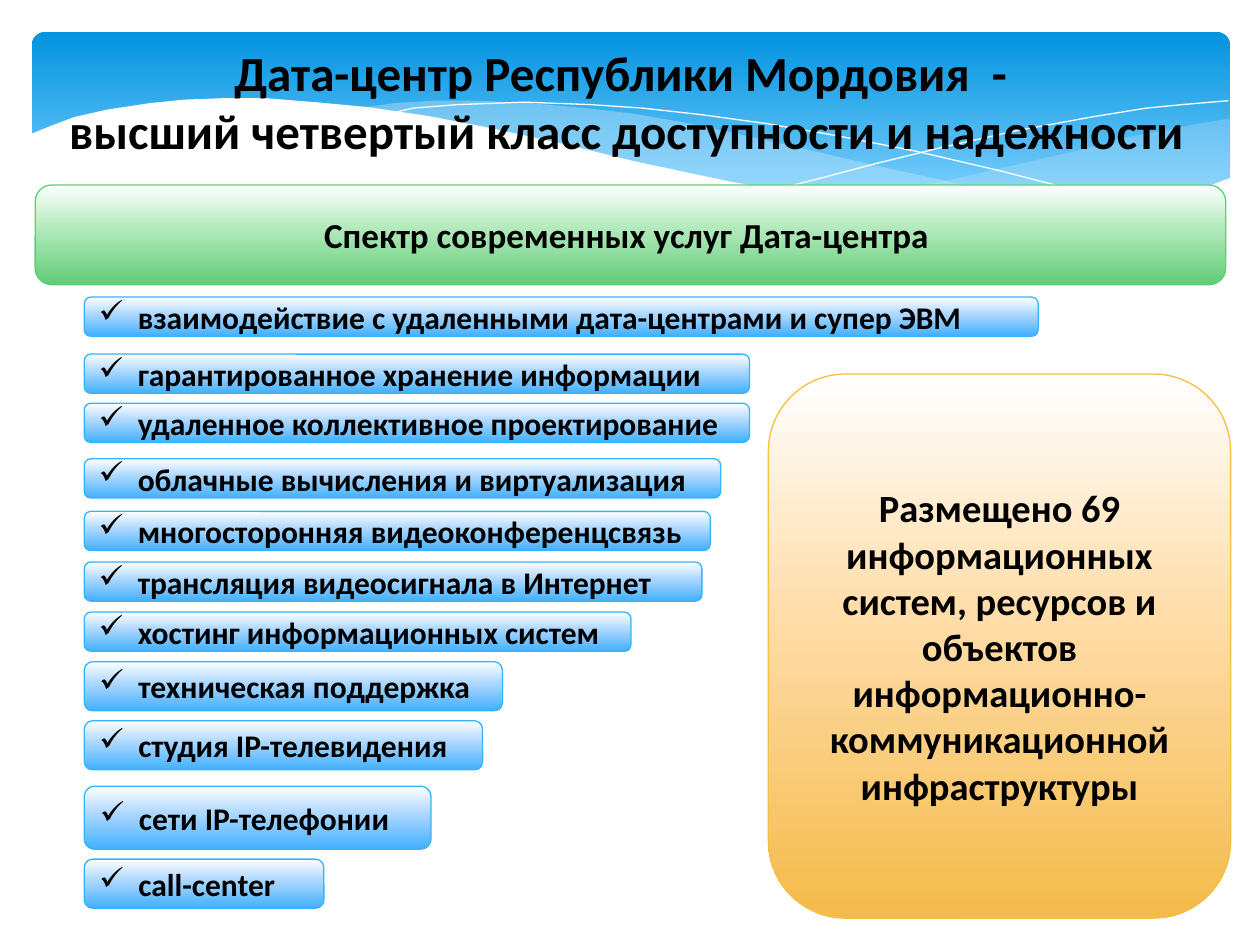
from copy import deepcopy
from dataclasses import dataclass

from lxml.etree import SubElement
from pptx import Presentation
from pptx.dml.color import RGBColor
from pptx.enum.shapes import MSO_SHAPE
from pptx.enum.text import MSO_ANCHOR, PP_ALIGN
from pptx.oxml.ns import qn
from pptx.util import Cm, Pt


@dataclass(frozen=True)
class Theme:
    font: str = "Calibri"
    ink: str = "000000"
    white: str = "FFFFFF"
    wave: str = "C6E7FC"
    header: tuple = ((0, "0293E0"), (0.9, "83D3FE"))
    green: tuple = ((0, "FFFFFF"), (0.44, "B1E9BB"), (1, "61CD78"))
    green_edge: str = "5BD078"
    blue: tuple = ((0, "FFFFFF"), (0.44, "ACD7FF"), (1, "42B0FD"))
    blue_edge: str = "31B6FD"
    orange: tuple = ((0, "FFFFFF"), (0.44, "FFDDAA"), (1, "F4BB4A"))
    orange_edge: str = "F5C040"
    title_size: int = 28
    summary_size: int = 22
    heading_size: int = 20
    service_size: int = 18


theme = Theme()
deck = Presentation()
deck.slide_width, deck.slide_height = Cm(25.4), Cm(19.05)
slide = deck.slides.add_slide(deck.slide_layouts[6])
shapes = slide.shapes


def write(holder, text, size, align=PP_ALIGN.CENTER, bullet=None):
    """Fill a shape with bold text, one paragraph per line."""
    frame = holder.text_frame
    frame.word_wrap = True
    frame.vertical_anchor = MSO_ANCHOR.MIDDLE
    frame.text = text
    for paragraph in frame.paragraphs:
        paragraph.alignment = align
        font = paragraph.font
        font.name, font.size, font.bold = theme.font, Pt(size), True
        font.color.rgb = RGBColor.from_string(theme.ink)
        if bullet:
            properties = paragraph.runs[0].font
            properties.name = theme.font
            layout = paragraph._p.get_or_add_pPr()
            layout.set("marL", str(Cm(0.79)))
            layout.set("indent", str(-Cm(0.79)))
            mark = SubElement(layout, qn("a:buChar"), char=bullet)
            layout.find(qn("a:defRPr")).addprevious(mark)


def add_panel(left, top, width, height, stops, edge=None, corner=0.167):
    """Add a rounded rectangle with a gradient running from top to bottom."""
    panel = shapes.add_shape(MSO_SHAPE.ROUNDED_RECTANGLE,
                             Cm(left), Cm(top), Cm(width), Cm(height))
    panel.adjustments[0] = corner
    panel.shadow.inherit = False
    panel.fill.gradient()
    panel.fill.gradient_angle = 270
    stop_list = panel.element.spPr.find(".//" + qn("a:gsLst"))
    for _ in stops[2:]:
        stop_list.append(deepcopy(stop_list[0]))
    for stop, (position, color) in zip(panel.fill.gradient_stops, stops):
        stop.position = position
        stop.color.rgb = RGBColor.from_string(color)
    if edge:
        panel.line.color.rgb = RGBColor.from_string(edge)
        panel.line.width = Pt(0.75)
    else:
        panel.line.fill.background()
    return panel


# Header band with waves: points in cm, fill opacity in percent (None = line)
add_panel(0.64, 0.64, 24.16, 3.96, theme.header, corner=0.071)

right_wave = [
    (24.79, 2.39), (24.08, 2.51), (23.39, 2.64), (22.63, 2.79), (21.87, 3),
    (20.45, 3.33), (19.13, 3.63), (17.93, 3.86), (16.79, 4.06), (17.55, 4.17),
    (18.26, 4.24), (18.92, 4.29), (19.53, 4.34), (20.4, 4.37), (21.21, 4.37),
    (21.92, 4.32), (22.58, 4.22), (23.19, 4.11), (23.75, 3.96), (24.46, 3.73),
    (24.79, 3.58)]
middle_wave = [
    (22.68, 4.24), (21.26, 4.04), (19.69, 3.78), (17.93, 3.4), (15.98, 2.95),
    (14.83, 2.69), (13.74, 2.46), (12.75, 2.29), (11.81, 2.18), (10.67, 2.08),
    (9.65, 2.03), (8.74, 2.03), (7.95, 2.08), (7.26, 2.18), (8.2, 2.29),
    (9.19, 2.46), (10.26, 2.69), (11.4, 2.95), (13.46, 3.43), (15.27, 3.81),
    (16.51, 4.01), (17.65, 4.19), (18.69, 4.29), (19.94, 4.37), (21.03, 4.39),
    (21.77, 4.34)]
falling_line = [
    (7.85, 2.29), (8.33, 2.18), (9.22, 2.11), (10.57, 2.06), (11.91, 2.11),
    (12.95, 2.18), (14.12, 2.31), (15.44, 2.49), (16.89, 2.74), (18.47, 3.05),
    (20.19, 3.45), (22.07, 3.94), (23.04, 4.22)]
rising_line = [
    (15.57, 3.84), (16.59, 3.58), (17.65, 3.3), (19, 2.97), (20.47, 2.64),
    (22, 2.36), (23.11, 2.18), (23.83, 2.11), (24.77, 2.03)]
white_wave = [
    (24.82, 3.58), (24.13, 3.84), (23.37, 4.04), (22.53, 4.22), (21.59, 4.32),
    (20.55, 4.34), (19.33, 4.32), (17.98, 4.19), (16.46, 3.96), (14.71, 3.66),
    (12.78, 3.25), (11.35, 2.9), (9.93, 2.59), (8.64, 2.34), (7.42, 2.16),
    (6.35, 2.06), (5.36, 1.98), (4.5, 1.98), (3.71, 2.01), (3.02, 2.08),
    (2.16, 2.21), (1.5, 2.36), (1.02, 2.54), (0.58, 2.72), (0.58, 5.69),
    (24.82, 5.69)]

for points, color, opacity in [
    (right_wave, theme.wave, 29),
    (middle_wave, theme.wave, 40),
    (falling_line, theme.white, None),
    (rising_line, theme.white, None),
    (white_wave, theme.white, 100),
]:
    start, *rest = [(Cm(x), Cm(y)) for x, y in points]
    outline = shapes.build_freeform(*start)
    outline.add_line_segments(rest, close=opacity is not None)
    wave = outline.convert_to_shape()
    wave.shadow.inherit = False
    if opacity is None:
        wave.fill.background()
        wave.line.color.rgb = RGBColor.from_string(color)
        wave.line.width = Pt(0)
    else:
        wave.line.fill.background()
        wave.fill.solid()
        wave.fill.fore_color.rgb = RGBColor.from_string(color)
        tint = wave.element.spPr.find(qn("a:solidFill"))[0]
        SubElement(tint, qn("a:alpha"), val=str(opacity * 1000))

title = shapes.add_textbox(Cm(0.71), Cm(0.74), Cm(23.6), Cm(2.59))
write(title, "Дата-центр Республики Мордовия  -\n"
             " высший четвертый класс доступности и надежности",
      size=theme.title_size)

heading = add_panel(0.71, 3.73, 24, 2.01, theme.green, theme.green_edge)
write(heading, "Спектр современных услуг Дата-центра ", size=theme.heading_size)

# Services: top, width, height in cm
for top, width, height, service in [
    (5.99, 19.23, 0.79, "взаимодействие с удаленными дата-центрами и супер ЭВМ"),
    (7.14, 13.41, 0.79, "гарантированное хранение информации"),
    (8.13, 13.41, 0.79, "удаленное коллективное проектирование"),
    (9.25, 12.83, 0.79, "облачные вычисления и виртуализация"),
    (10.31, 12.62, 0.79, "многосторонняя видеоконференцсвязь"),
    (11.33, 12.45, 0.79, "трансляция видеосигнала в Интернет"),
    (12.34, 11.02, 0.79, "хостинг информационных систем"),
    (13.34, 8.43, 0.99, "техническая поддержка"),
    (14.53, 8.03, 0.99, "студия IP-телевидения"),
    (15.85, 6.99, 1.27, "сети IP-телефонии"),
    (17.32, 4.83, 0.99, "сall-center"),
]:
    row = add_panel(1.7, top, width, height, theme.blue, theme.blue_edge)
    write(row, service, size=theme.service_size, align=PP_ALIGN.LEFT, bullet="✓")

summary = add_panel(15.49, 7.54, 9.32, 10.97, theme.orange, theme.orange_edge)
write(summary, "Размещено 69 информационных систем, ресурсов и объектов "
               "информационно-коммуникационной инфраструктуры",
      size=theme.summary_size)

deck.save("out.pptx")
